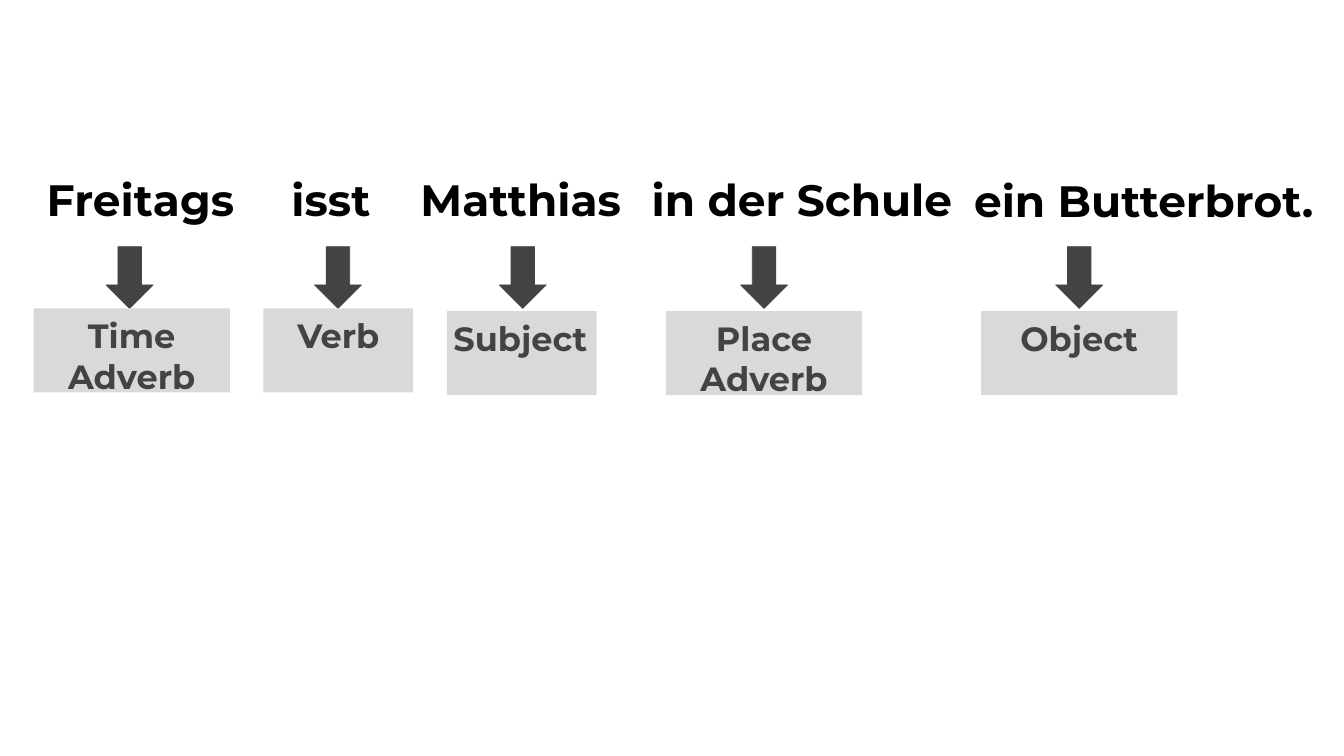
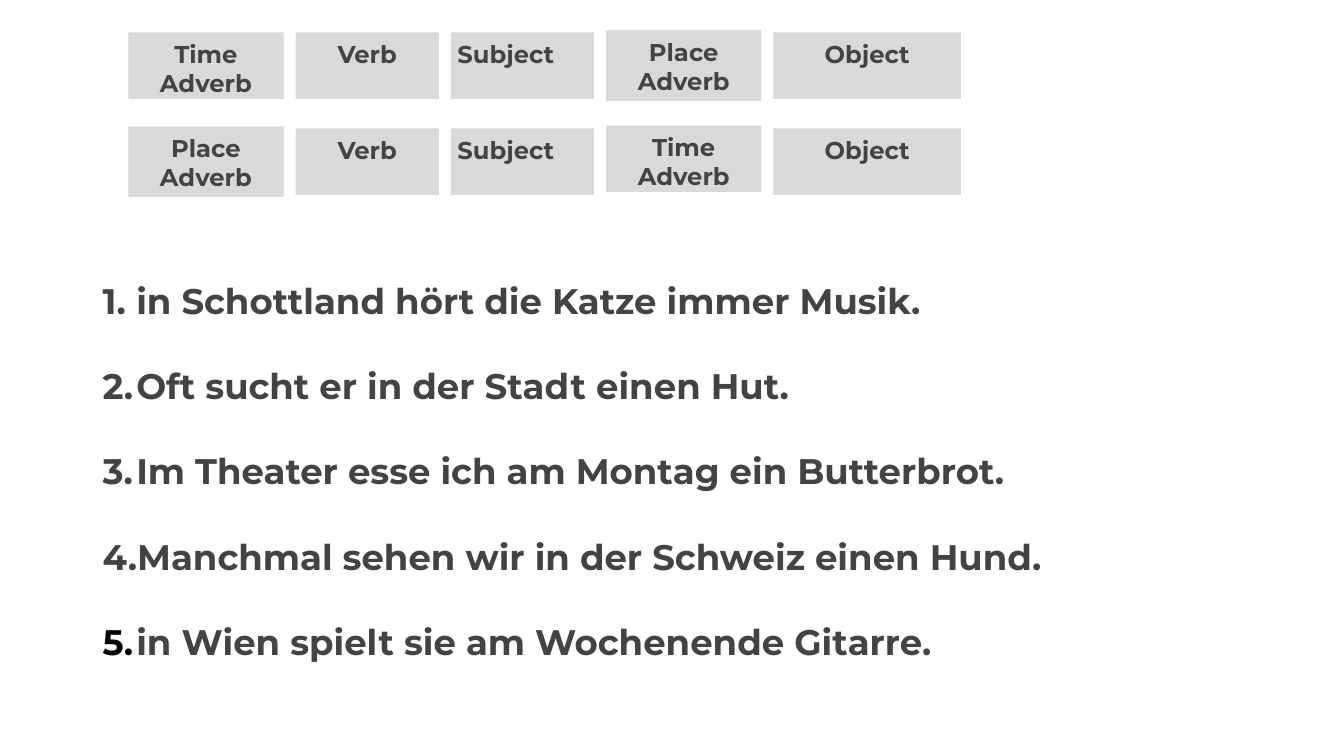
"""Build two slides on German word order: a labelled sentence and a translation exercise."""
from typing import NamedTuple

from lxml import etree
from pptx import Presentation
from pptx import util as u
from pptx.dml.color import RGBColor
from pptx.enum import shapes, text
from pptx.oxml.ns import qn

COLUMNS, ROWS = 20, 11.25
WIDTH, HEIGHT = u.Inches(20), u.Inches(11.25)
FONT = "Montserrat"
COLORS = {"paper": "FFFFFF", "ink": "000000", "charcoal": "434343", "tag": "D9D9D9"}
CENTER, LEFT = text.PP_ALIGN.CENTER, text.PP_ALIGN.LEFT
INSET = 0.1


class Area(NamedTuple):
    column: float
    row: float
    columns: float
    rows: float


class Style(NamedTuple):
    size: int
    color: str
    fill: str


class SentencePart(NamedTuple):
    words: str
    word_area: Area
    word_align: text.PP_ALIGN
    arrow_column: float
    role: str
    tag_column: float
    tag_row: float
    tag_columns: float
    indent: float = 0


class Slot(NamedTuple):
    role: str
    columns: float
    rows: float = 0.99
    lift: float = 0


WORD = Style(47, "ink", "paper")
LARGE_TAG = Style(36, "charcoal", "tag")
SMALL_TAG = Style(26, "charcoal", "tag")
ROLES = {
    "time": ("Time", "Adverb"),
    "verb": ("Verb",),
    "subject": ("Subject",),
    "place": ("Place", "Adverb"),
    "object": ("Object",),
}
SENTENCE = [
    SentencePart("Freitags", Area(0, 2.47, 4.18, 1.62), CENTER, 1.58, "time", 0.5, 4.59, 2.92),
    SentencePart("isst", Area(3.88, 2.47, 2.09, 1.62), CENTER, 4.68, "verb", 3.92, 4.59, 2.23),
    SentencePart("Matthias", Area(6.06, 2.47, 3.38, 1.62), CENTER, 7.43, "subject", 6.65, 4.63, 2.23),
    SentencePart("in der Schule", Area(9.6, 2.47, 5, 1.62), LEFT, 11.02, "place", 9.91, 4.63, 2.92),
    SentencePart("ein Butterbrot.", Area(14.18, 2.49, 5.51, 1.14), CENTER, 15.71, "object", 14.6, 4.63, 2.92, 0.17),
]
VERB, SUBJECT, OBJECT = Slot("verb", 2.13), Slot("subject", 2.13), Slot("object", 2.79)
PLACE = Slot("place", 2.31, 1.05, 0.03)
PATTERNS = {
    0.48: [Slot("time", 2.31), VERB, SUBJECT, PLACE, OBJECT],
    1.91: [PLACE, VERB, SUBJECT, Slot("time", 2.31, lift=0.04), OBJECT],
}
PATTERN_LEFT, PATTERN_GAP = 1.91, 0.18
EXERCISES = [
    ("in Schottland hört die Katze immer Musik.", "charcoal"),
    ("Oft sucht er in der Stadt einen Hut.", "charcoal"),
    ("Im Theater esse ich am Montag ein Butterbrot.", "charcoal"),
    ("Manchmal sehen wir in der Schweiz einen Hund.", "charcoal"),
    ("in Wien spielt sie am Wochenende Gitarre.", "ink"),
]


def place(area: Area) -> tuple[int, int, int, int]:
    across, down = WIDTH / COLUMNS, HEIGHT / ROWS
    return (round(area.column * across), round(area.row * down),
            round(area.columns * across), round(area.rows * down))


def set_frame(box, indent: float = 0):
    frame = box.text_frame
    frame.word_wrap = True
    frame.vertical_anchor = text.MSO_ANCHOR.TOP
    frame.margin_left = u.Inches(INSET + indent)
    frame.margin_top = frame.margin_right = frame.margin_bottom = u.Inches(INSET)
    return frame


def add_paragraph(frame, index: int):
    return frame.add_paragraph() if index else frame.paragraphs[0]


def add_span(para, words: str, size: int, color: str) -> None:
    span = para.add_run()
    span.text = words
    span.font.name = FONT
    span.font.size = u.Pt(size)
    span.font.bold = True
    span.font.color.rgb = RGBColor.from_string(COLORS[color])


def add_solid(page, kind: shapes.MSO_SHAPE, area: Area, fill: str):
    box = page.shapes.add_shape(kind, *place(area))
    box.shadow.inherit = False
    box.fill.solid()
    box.fill.fore_color.rgb = RGBColor.from_string(COLORS[fill])
    box.line.fill.background()
    return box


def add_label(page, area: Area, lines: tuple[str, ...], style: Style,
              align: text.PP_ALIGN, indent: float = 0) -> None:
    frame = set_frame(add_solid(page, shapes.MSO_SHAPE.RECTANGLE, area, style.fill), indent)
    for index, line in enumerate(lines):
        para = add_paragraph(frame, index)
        para.alignment = align
        add_span(para, line, style.size, style.color)


def add_tag(page, area: Area, role: str, style: Style) -> None:
    add_label(page, area, ROLES[role], style, LEFT if role == "subject" else CENTER)


def add_arrow(page, column: float) -> None:
    arrow = add_solid(page, shapes.MSO_SHAPE.DOWN_ARROW, Area(column, 3.67, 0.7, 0.92), "charcoal")
    arrow.line.color.rgb = RGBColor.from_string(COLORS["charcoal"])
    arrow.line.width = u.Pt(0.75)


def number_paragraph(para, color: str) -> None:
    properties = para._p.get_or_add_pPr()
    properties.set("marL", str(u.Inches(0.5)))
    properties.set("indent", str(u.Inches(-0.51)))
    bullet_color = etree.SubElement(properties, qn("a:buClr"))
    etree.SubElement(bullet_color, qn("a:srgbClr"), val=COLORS[color])
    etree.SubElement(properties, qn("a:buAutoNum"), type="arabicPeriod")


def add_page(deck):
    page = deck.slides.add_slide(deck.slide_layouts[6])
    page.background.fill.solid()
    page.background.fill.fore_color.rgb = RGBColor.from_string(COLORS["paper"])
    return page


def build_sentence(deck) -> None:
    page = add_page(deck)
    for part in SENTENCE:
        add_label(page, part.word_area, (part.words,), WORD, part.word_align, part.indent)
    for part in SENTENCE:
        add_arrow(page, part.arrow_column)
        add_tag(page, Area(part.tag_column, part.tag_row, part.tag_columns, 1.25), part.role, LARGE_TAG)


def build_exercise(deck) -> None:
    page = add_page(deck)
    frame = set_frame(page.shapes.add_textbox(*place(Area(1.43, 3.42, 18.44, 6.25))))
    for index, (sentence, number_color) in enumerate(EXERCISES):
        para = add_paragraph(frame, index)
        number_paragraph(para, number_color)
        para.line_spacing = 2.0
        add_span(para, sentence, 38, "charcoal")
    for row, slots in PATTERNS.items():
        column = PATTERN_LEFT
        for slot in slots:
            add_tag(page, Area(column, row - slot.lift, slot.columns, slot.rows), slot.role, SMALL_TAG)
            column += slot.columns + PATTERN_GAP


def main() -> None:
    deck = Presentation()
    deck.slide_width, deck.slide_height = WIDTH, HEIGHT
    build_sentence(deck)
    build_exercise(deck)
    deck.save("out.pptx")


if __name__ == "__main__":
    main()
